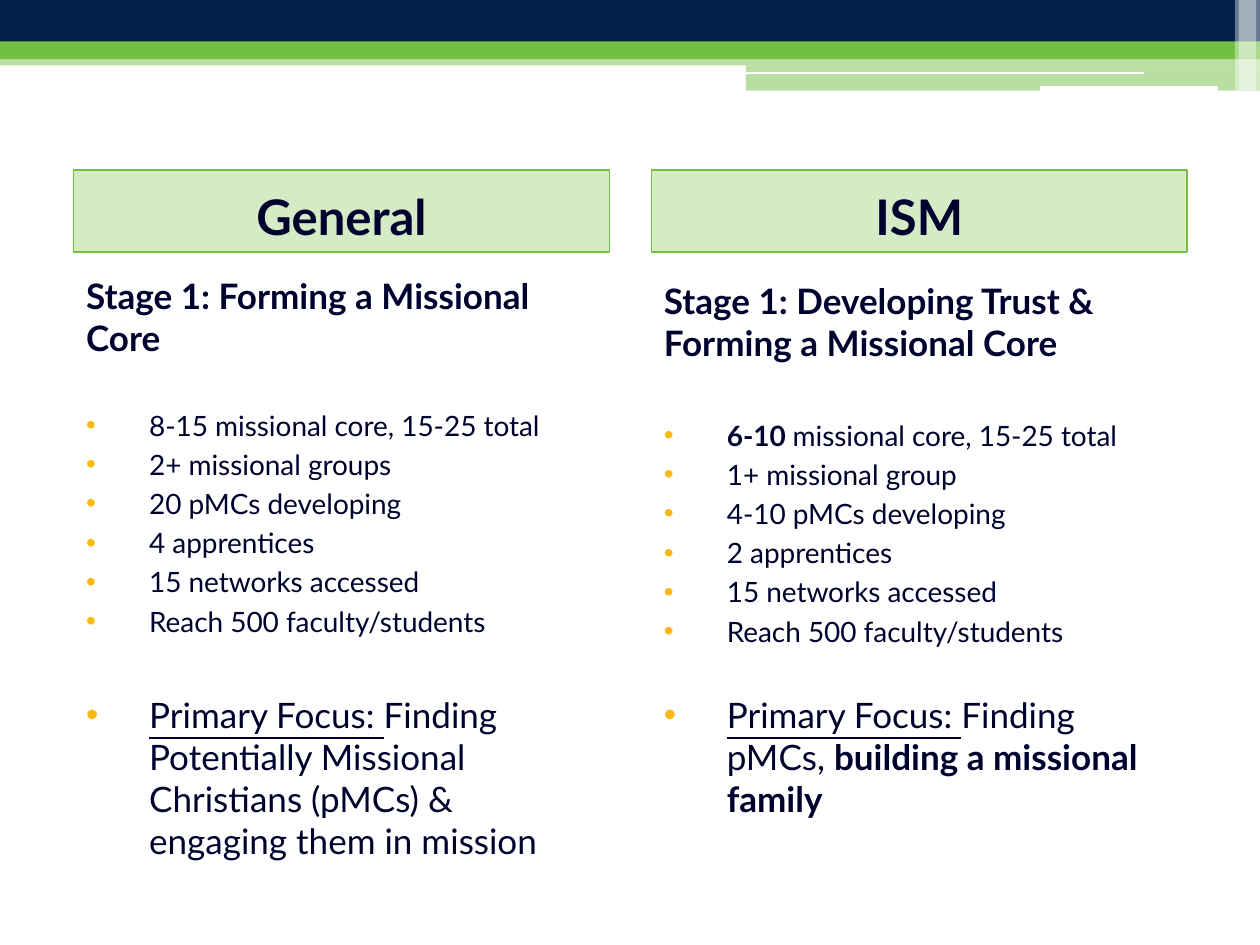
from pptx import Presentation
from pptx.dml.color import RGBColor as Rgb
from pptx.enum.shapes import MSO_CONNECTOR as Link, MSO_SHAPE as Form
from pptx.enum.text import MSO_ANCHOR as Anchor, PP_ALIGN as Align
from pptx.oxml.ns import qn
from pptx.util import Inches, Pt
from lxml.etree import SubElement as Sub

GREEN, NAVY, WHITE, INK, GOLD = "72BF44", "001F49", "FFFFFF", "00022E", "FDB913"


def paint(color, tone):
    color.rgb = Rgb.from_string(tone)


def write(par, text, size=16, bold=False, under=False):
    run = par.add_run()
    run.text = text
    font = run.font
    font.name, font.size, font.bold, font.underline = "Lato", Pt(size), bold, under
    paint(font.color, INK)


def dot(par):
    """Give the paragraph a gold bullet and a half-inch hanging indent."""
    props = par._p.get_or_add_pPr()
    props.set("marL", str(Inches(0.5)))
    props.set("indent", str(-Inches(0.5)))
    Sub(Sub(props, qn("a:buClr")), qn("a:srgbClr"), val=GOLD)
    Sub(props, qn("a:buFont"), typeface="Arial")
    Sub(props, qn("a:buChar"), char="•")


class Page:
    """Draws on one slide; lengths are percent of its width and height."""

    def __init__(self):
        self.deck = Presentation()
        self.deck.slide_width, self.deck.slide_height = Inches(10), Inches(7.5)
        self.slide = self.deck.slides.add_slide(self.deck.slide_layouts[6])
        self.shapes = self.slide.shapes

    def place(self, x, y, w, h):
        wide, high = self.deck.slide_width / 100, self.deck.slide_height / 100
        return [round(v) for v in (x * wide, y * high, w * wide, h * high)]

    def band(self, x, y, w, h, tone, alpha=100, edge=None):
        box = self.shapes.add_shape(Form.RECTANGLE, *self.place(x, y, w, h))
        box.shadow.inherit = False
        box.fill.solid()
        paint(box.fill.fore_color, tone)
        if alpha < 100:
            color = box._element.spPr.find(qn("a:solidFill"))[0]
            Sub(color, qn("a:alpha"), val=str(alpha * 1000))
        if edge:
            paint(box.line.color, edge)
            box.line.width = Pt(0.75)
        else:
            box.line.fill.background()
        return box

    def rule(self, x, y, w, width):
        left, top, span, _ = self.place(x, y, w, 0)
        line = self.shapes.add_connector(Link.STRAIGHT, left, top, left + span, top)
        paint(line.line.color, WHITE)
        line.line.width = Pt(width)
        Sub(line._element.spPr, qn("a:effectLst"))

    def head(self, x, text):
        frame = self.band(x, 18, 42.5, 8.67, GREEN, 30, GREEN).text_frame
        frame.vertical_anchor = Anchor.BOTTOM
        par = frame.paragraphs[0]
        par.alignment = Align.CENTER
        write(par, text, size=28, bold=True)

    def body(self, x, y, stage, items, focus, gaps):
        """Stage line, bulleted items and focus; gaps come before the last two."""
        box = self.shapes.add_textbox(*self.place(x, y, 42.5, 100 - y))
        frame = box.text_frame
        frame.word_wrap = True
        write(frame.paragraphs[0], stage, size=20, bold=True)
        spaces = [gaps[0]] + [3.2] * (len(items) - 1) + [gaps[1]]
        for runs, space in zip(items + [focus], spaces):
            par = frame.add_paragraph()
            par.space_before = Pt(space)
            dot(par)
            for text, form in runs:
                write(par, text, **form)


def plain(*lines):
    return [[(line, {})] for line in lines]


def main():
    page = Page()
    page.band(0, 3.87, 100, 2.4, GREEN)
    page.band(0, 5.6, 100, 1.33, GREEN, 50)
    page.band(59.2, 6.93, 40.8, 2.67, GREEN, 50)
    page.band(0, 0, 100, 4.4, NAVY)
    page.rule(59.2, 7.73, 31.6, 1.5)
    page.rule(82.5, 9.33, 14.2, 3)
    for x in (98.3, 98):
        page.band(x, 0, 1.7, 9.6, WHITE, 40)

    left, right = 5.85, 51.7
    big = dict(size=20)
    lead = ("Primary Focus: ", dict(size=20, under=True))
    shared = plain("15 networks accessed", "Reach 500 faculty/students")

    page.head(left, "General")
    page.body(
        left, 28.4, "Stage 1: Forming a Missional Core",
        plain("8-15 missional core, 15-25 total", "2+ missional groups",
              "20 pMCs developing", "4 apprentices") + shared,
        [lead, ("Finding Potentially Missional Christians (pMCs) & "
                "engaging them in mission", big)],
        gaps=(28.4, 32))

    page.head(right, "ISM")
    page.body(
        right, 28.93, "Stage 1: Developing Trust & Forming a Missional Core",
        [[("6-10 ", dict(bold=True)), ("missional core, 15-25 total", {})]]
        + plain("1+ missional group", "4-10 pMCs developing", "2 apprentices")
        + shared,
        [lead, ("Finding pMCs, ", big),
         ("building a missional family", dict(size=20, bold=True))],
        gaps=(31.2, 26.4))

    page.deck.save("out.pptx")


if __name__ == "__main__":
    main()
